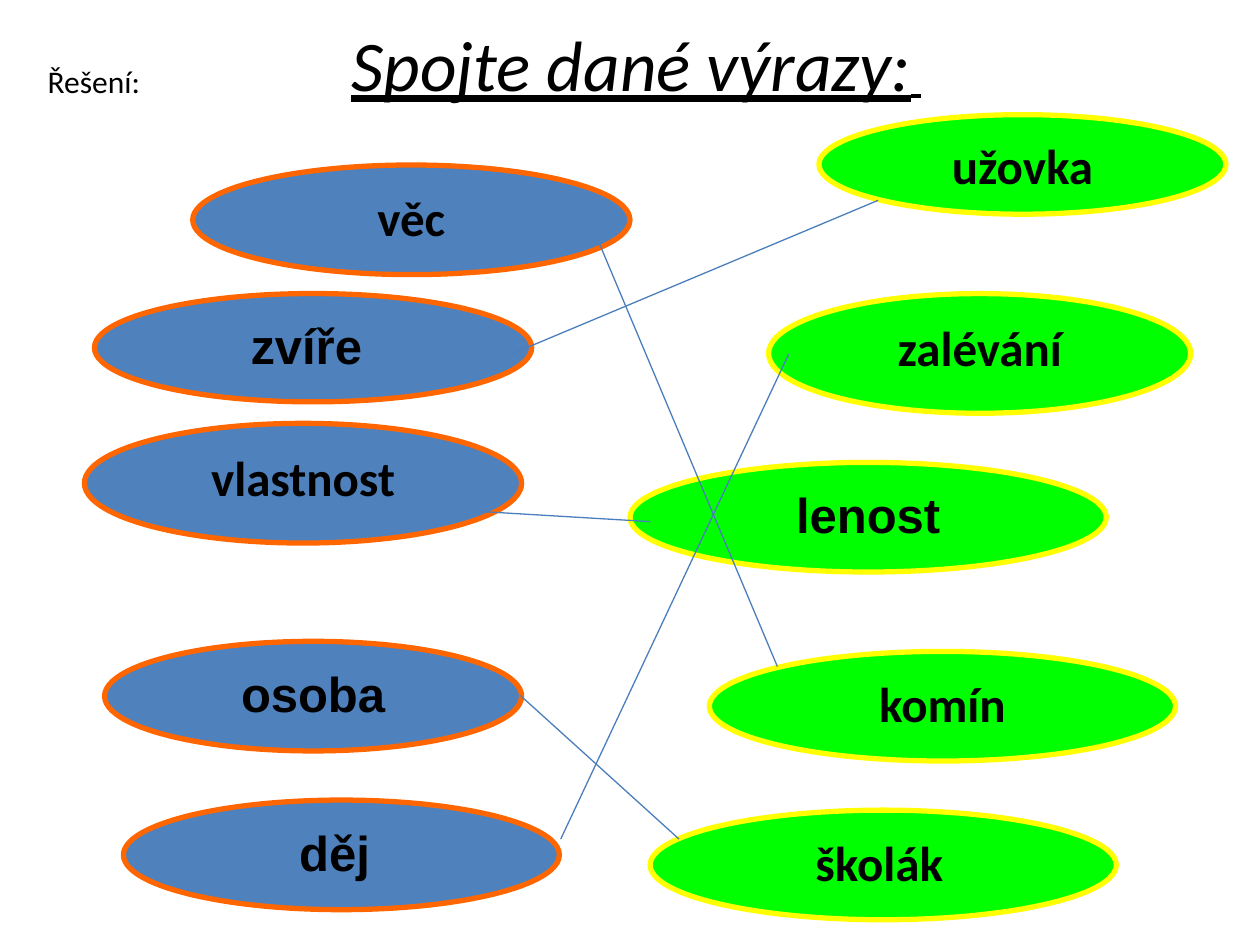
from lxml import etree
from pptx import Presentation
from pptx.dml.color import RGBColor
from pptx.enum.shapes import MSO_CONNECTOR, MSO_SHAPE
from pptx.enum.text import MSO_ANCHOR, MSO_AUTO_SIZE, PP_ALIGN
from pptx.oxml.ns import qn
from pptx.util import Inches, Pt

ELLIPSE = MSO_SHAPE.OVAL
STRAIGHT = MSO_CONNECTOR.STRAIGHT
TOP, MIDDLE = MSO_ANCHOR.TOP, MSO_ANCHOR.MIDDLE
LEFT, CENTER = PP_ALIGN.LEFT, PP_ALIGN.CENTER
FIT_SHAPE = MSO_AUTO_SIZE.SHAPE_TO_FIT_TEXT

COLORS = {
    "text": "000000",
    "category": "4F81BD",
    "category_line": "FF6600",
    "example": "00FF00",
    "example_line": "FFFF00",
    "match": "4B7EBC",
}

CATEGORIES = [
    ("vlastnost", "Calibri", (0.67, 3.36, 3.47, 0.95)),
    ("osoba", "Arial", (0.83, 5.09, 3.31, 0.87)),
    ("zvíře ", "Arial", (0.75, 2.33, 3.47, 0.86)),
    ("děj ", "Arial", (0.98, 6.35, 3.46, 0.87)),
    ("věc", "Calibri", (1.53, 1.31, 3.47, 0.87)),
]
EXAMPLES = [
    ("zalévání", "Calibri", (6.1, 2.33, 3.35, 0.95)),
    ("užovka", "Calibri", (6.5, 0.91, 3.23, 0.79)),
    ("komín", "Calibri", (5.63, 5.17, 3.7, 0.87)),
    ("lenost", "Arial", (5, 3.67, 3.78, 0.87)),
    ("školák", "Calibri", (5.16, 6.43, 3.7, 0.87)),
]
MATCHES = [
    ((4.76, 1.94), (6.17, 5.29)),
    ((4.06, 2.81), (6.97, 1.59)),
    ((3.82, 4.06), (5.16, 4.14)),
    ((4.13, 5.52), (5.39, 6.66)),
    ((4.45, 6.66), (6.26, 2.81)),
]


def color(name):
    return RGBColor.from_string(COLORS[name])


def add_run(paragraph, text, size=28, font="Calibri", bold=False, italic=False, underline=False):
    run = paragraph.add_run()
    run.text = text
    run.font.size = Pt(size)
    run.font.name = font
    run.font.bold = bold
    run.font.italic = italic
    run.font.underline = underline
    run.font.color.rgb = color("text")


class SlideBuilder:
    def __init__(self, slide):
        self.slide = slide

    def text_box(self, box, align=LEFT, anchor=TOP):
        shape = self.slide.shapes.add_textbox(*map(Inches, box))
        frame = shape.text_frame
        frame.word_wrap = True
        frame.vertical_anchor = anchor
        frame.paragraphs[0].alignment = align
        return frame

    def ellipse(self, text, font, box, style):
        shape = self.slide.shapes.add_shape(ELLIPSE, *map(Inches, box))
        shape.shadow.inherit = False
        shape.fill.solid()
        shape.fill.fore_color.rgb = color(style)
        shape.line.color.rgb = color(style + "_line")
        shape.line.width = Pt(3)
        frame = shape.text_frame
        frame.word_wrap = True
        frame.vertical_anchor = TOP
        paragraph = frame.paragraphs[0]
        paragraph.alignment = CENTER
        add_run(paragraph, text, font=font, bold=True)
        return paragraph

    def match(self, start, end):
        line = self.slide.shapes.add_connector(STRAIGHT, *map(Inches, start + end))
        line.line.color.rgb = color("match")
        line.line.width = Pt(0.75)
        etree.SubElement(line._element.spPr, qn("a:effectLst"))


def main():
    presentation = Presentation()
    presentation.slide_width = Inches(10)
    presentation.slide_height = Inches(7.5)
    builder = SlideBuilder(presentation.slides.add_slide(presentation.slide_layouts[6]))

    title = builder.text_box((0.51, 0.21, 9, 0.71), CENTER, MIDDLE).paragraphs[0]
    title.line_spacing = 0.8
    add_run(title, " ", size=25.9, italic=True)
    add_run(title, "Spojte dané výrazy:", size=40.7, italic=True, underline=True)
    add_run(title, " ", size=25.9, italic=True, underline=True)

    for category in CATEGORIES:
        builder.ellipse(*category, "category")
    for example in EXAMPLES:
        paragraph = builder.ellipse(*example, "example")
    add_run(paragraph, " ", size=18, font="Times New Roman")

    solution = builder.text_box((0.28, 0.44, 1.57, 0.4))
    solution.auto_size = FIT_SHAPE
    add_run(solution.paragraphs[0], "Řešení:", size=18)

    for start, end in MATCHES:
        builder.match(start, end)

    presentation.save("out.pptx")


if __name__ == "__main__":
    main()
